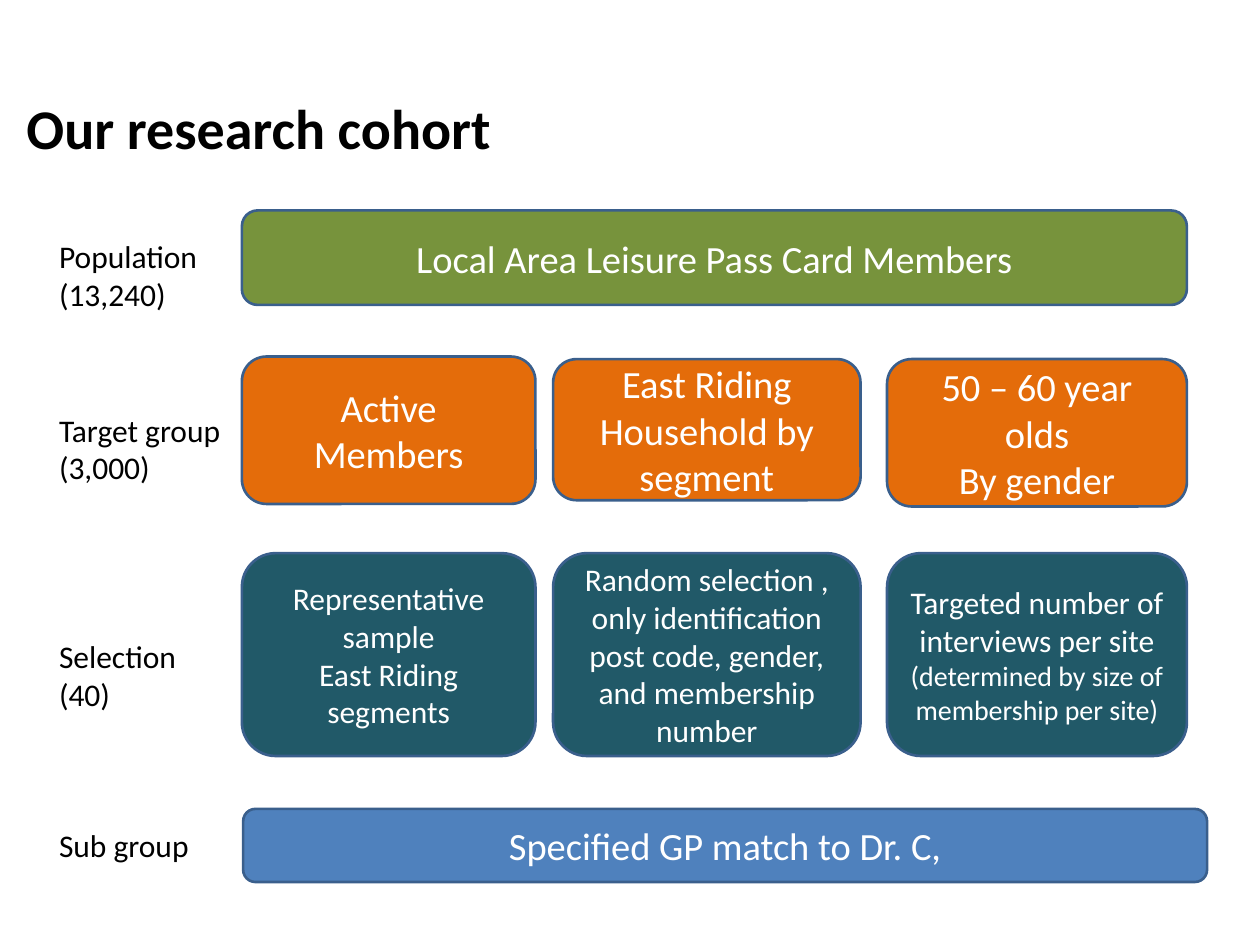
from pptx import Presentation
from pptx.dml.color import RGBColor
from pptx.enum.shapes import MSO_SHAPE
from pptx.enum.text import MSO_ANCHOR, MSO_AUTO_SIZE, PP_ALIGN
from pptx.util import Inches, Pt

ROUND = MSO_SHAPE.ROUNDED_RECTANGLE
MIDDLE = MSO_ANCHOR.MIDDLE
GROW = MSO_AUTO_SIZE.SHAPE_TO_FIT_TEXT
LEFT, CENTER = PP_ALIGN.LEFT, PP_ALIGN.CENTER

FONT = "Calibri"
COLORS = {"black": "000000", "white": "FFFFFF", "green": "77933C",
          "orange": "E46C0A", "teal": "215968", "blue": "4F81BD",
          "edge": "3A5F8C"}
TITLE = "Our research cohort"
LABELS = [
    (1.83, 0.71, ["Population", "(13,240)"]),
    (3.21, 0.71, ["Target group", "(3,000)"]),
    (5.01, 0.71, ["Selection", "(40)"]),
    (6.51, 0.4, ["Sub group"]),
]
COLS = [(1.92, 2.33), (4.39, 2.44), (7.04, 2.38)]
BARS = [
    ((1.92, 1.67, 7.5, 0.75), "green", "Local Area Leisure Pass Card Members"),
    ((1.93, 6.42, 7.65, 0.58), "blue", "Specified GP match to Dr. C,"),
]
ROWS = [
    ("orange", [
        (2.83, 1.17, [("Active Members", 22)]),
        (2.85, 1.12, [("East Riding Household by segment", 22)]),
        (2.85, 1.17, [("50 – 60 year olds", 22), ("By gender", 22)]),
    ]),
    ("teal", [
        (4.39, 1.61, [("Representative sample", 18),
                      ("East Riding segments", 18)]),
        (4.39, 1.61, [("Random selection , only identification post code, "
                       "gender, and membership number", 18)]),
        (4.39, 1.61, [("Targeted number of interviews per site", 18),
                      ("(determined by size of membership per site)", 16)]),
    ]),
]


def rgb(name):
    return RGBColor.from_string(COLORS[name])


def write(frame, lines, color, align, bold=False):
    frame.word_wrap = True
    for i, (text, size) in enumerate(lines):
        para = frame.add_paragraph() if i else frame.paragraphs[0]
        para.alignment = align
        run = para.add_run()
        run.text = text
        run.font.name = FONT
        run.font.size = Pt(size)
        run.font.bold = bold
        run.font.color.rgb = rgb(color)


def add_box(slide, place, fill, lines):
    box = slide.shapes.add_shape(ROUND, *map(Inches, place))
    box.shadow.inherit = False
    box.fill.solid()
    box.fill.fore_color.rgb = rgb(fill)
    box.line.color.rgb = rgb("edge")
    box.line.width = Pt(1.5)
    box.text_frame.vertical_anchor = MIDDLE
    write(box.text_frame, lines, "white", CENTER)


def add_title(slide):
    title = slide.shapes.title
    title.left, title.top = Inches(0), Inches(0.67)
    title.width, title.height = Inches(10), Inches(0.67)
    title.fill.solid()
    title.fill.fore_color.rgb = rgb("white")
    frame = title.text_frame
    frame.margin_left = Inches(0.21)
    frame.vertical_anchor = MIDDLE
    write(frame, [(TITLE, 32)], "black", LEFT, True)


def main():
    """Build the research cohort slide."""
    deck = Presentation()
    deck.slide_width, deck.slide_height = Inches(10), Inches(7.5)
    slide = deck.slides.add_slide(deck.slide_layouts[5])
    add_title(slide)
    for top, high, lines in LABELS:
        label = slide.shapes.add_textbox(
            Inches(0.37), Inches(top), Inches(1.58), Inches(high))
        write(label.text_frame, [(text, 18) for text in lines], "black", LEFT)
        label.text_frame.auto_size = GROW
    for place, fill, text in BARS:
        add_box(slide, place, fill, [(text, 22)])
    for fill, cells in ROWS:
        for (left, wide), (top, high, lines) in zip(COLS, cells):
            add_box(slide, (left, top, wide, high), fill, lines)
    deck.save("out.pptx")


if __name__ == "__main__":
    main()
